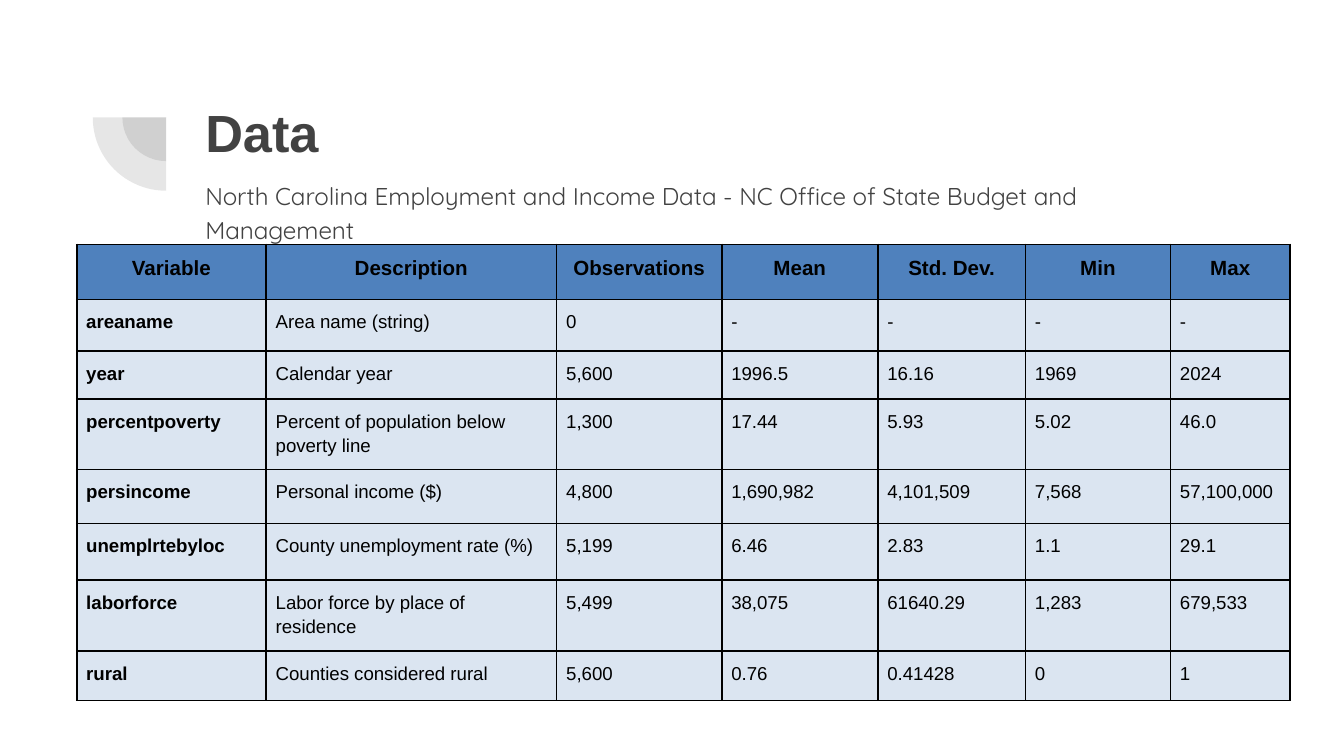
from lxml import etree
from pptx import Presentation
from pptx.dml.color import RGBColor
from pptx.enum.shapes import MSO_SHAPE
from pptx.enum.text import MSO_ANCHOR, PP_ALIGN
from pptx.oxml import parse_xml
from pptx.oxml.ns import nsdecls, qn
from pptx.util import Cm, Pt

PIE = MSO_SHAPE.PIE
TOP = MSO_ANCHOR.TOP
LEFT, CENTER = PP_ALIGN.LEFT, PP_ALIGN.CENTER

GRAY = RGBColor(0x42, 0x42, 0x42)
BLACK = RGBColor(0, 0, 0)
HEADER_BLUE = RGBColor(0x4F, 0x81, 0xBD)
ROW_BLUE = RGBColor(0xDB, 0xE5, 0xF1)

TITLE = "Data"
SOURCE = "North Carolina Employment and Income Data - NC Office of State Budget and Management"
STATISTICS = [
    ("Variable", "Description", "Observations", "Mean", "Std. Dev.", "Min", "Max"),
    ("areaname", "Area name (string)", "0", "-", "-", "-", "-"),
    ("year", "Calendar year", "5,600", "1996.5", "16.16", "1969", "2024"),
    ("percentpoverty", "Percent of population below poverty line",
     "1,300", "17.44", "5.93", "5.02", "46.0"),
    ("persincome", "Personal income ($)",
     "4,800", "1,690,982", "4,101,509", "7,568", "57,100,000"),
    ("unemplrtebyloc", "County unemployment rate (%)",
     "5,199", "6.46", "2.83", "1.1", "29.1"),
    ("laborforce", "Labor force by place of residence",
     "5,499", "38,075", "61640.29", "1,283", "679,533"),
    ("rural", "Counties considered rural", "5,600", "0.76", "0.41428", "0", "1"),
]
COLUMN_WIDTHS = [3.58, 5.49, 3.12, 2.95, 2.79, 2.74, 2.26]
ROW_HEIGHTS = [1.04, 0.97, 0.91, 1.22, 1.02, 1.07, 1.27, 0.94]
TABLE_LEFT, TABLE_TOP = 1.45, 4.62
CELL_MARGIN = 0.18

ARC_CENTER = (3.14, 2.22)
ARC_DIAMETERS = [1.65, 2.77]
ARC_ANGLES = (107.93, 162)
ARC_OPACITY = 13


def style(paragraph, font_name, size, color, bold=False, spacing=1.0, align=LEFT):
    paragraph.alignment = align
    paragraph.line_spacing = spacing
    font = paragraph.font
    font.name, font.size, font.bold = font_name, Pt(size), bold
    font.color.rgb = color


def set_text(frame, text):
    """Fill a top-anchored, wrapping frame and return its paragraph."""
    frame.text = text
    frame.word_wrap = True
    frame.vertical_anchor = TOP
    frame.margin_left = frame.margin_right = Cm(0.25)
    frame.margin_top = frame.margin_bottom = Cm(0.25)
    return frame.paragraphs[0]


def add_arc(slide, diameter):
    left, top = (center - diameter / 2 for center in ARC_CENTER)
    arc = slide.shapes.add_shape(PIE, Cm(left), Cm(top), Cm(diameter), Cm(diameter))
    for index, angle in enumerate(ARC_ANGLES):
        arc.adjustments[index] = angle
    arc.rotation = 270
    arc.shadow.inherit = False
    arc.line.fill.background()
    arc.fill.solid()
    arc.fill.fore_color.rgb = GRAY
    color = arc.fill._xPr.find(".//" + qn("a:srgbClr"))
    etree.SubElement(color, qn("a:alpha"), val=str(ARC_OPACITY * 1000))


def add_borders(cell):
    properties = cell._tc.get_or_add_tcPr()
    for index, side in enumerate(("lnL", "lnR", "lnT", "lnB")):
        properties.insert(index, parse_xml(
            f'<a:{side} {nsdecls("a")} w="{Pt(1)}"><a:solidFill>'
            f'<a:srgbClr val="{BLACK}"/></a:solidFill></a:{side}>'))


def add_statistics(slide):
    table = slide.shapes.add_table(
        len(STATISTICS), len(COLUMN_WIDTHS), Cm(TABLE_LEFT), Cm(TABLE_TOP),
        Cm(sum(COLUMN_WIDTHS)), Cm(sum(ROW_HEIGHTS))).table
    table.first_row = table.horz_banding = False
    for column, width in zip(table.columns, COLUMN_WIDTHS):
        column.width = Cm(width)
    for r, (values, height) in enumerate(zip(STATISTICS, ROW_HEIGHTS)):
        table.rows[r].height = Cm(height)
        header = r == 0
        for c, value in enumerate(values):
            cell = table.cell(r, c)
            cell.text = value
            cell.margin_left = cell.margin_right = Cm(CELL_MARGIN)
            cell.margin_top = cell.margin_bottom = Cm(CELL_MARGIN)
            cell.fill.solid()
            cell.fill.fore_color.rgb = HEADER_BLUE if header else ROW_BLUE
            style(cell.text_frame.paragraphs[0], "Arial", 11 if header else 10, BLACK,
                  bold=header or c == 0, spacing=1.15,
                  align=CENTER if header else LEFT)
            add_borders(cell)


def main():
    deck = Presentation()
    deck.slide_width, deck.slide_height = Cm(25.4), Cm(14.29)
    slide = deck.slides.add_slide(deck.slide_layouts[5])

    for diameter in ARC_DIAMETERS:
        add_arc(slide, diameter)

    title = slide.shapes.title
    title.left, title.top, title.width, title.height = Cm(3.63), Cm(1.65), Cm(19.53), Cm(2.77)
    style(set_text(title.text_frame, TITLE), "Arial", 28, GRAY, bold=True)

    source = slide.shapes.add_textbox(Cm(3.63), Cm(3.1), Cm(19.81), Cm(8.31))
    style(set_text(source.text_frame, SOURCE), "Quicksand", 13, GRAY, spacing=1.15)

    add_statistics(slide)
    deck.save("out.pptx")


if __name__ == "__main__":
    main()
